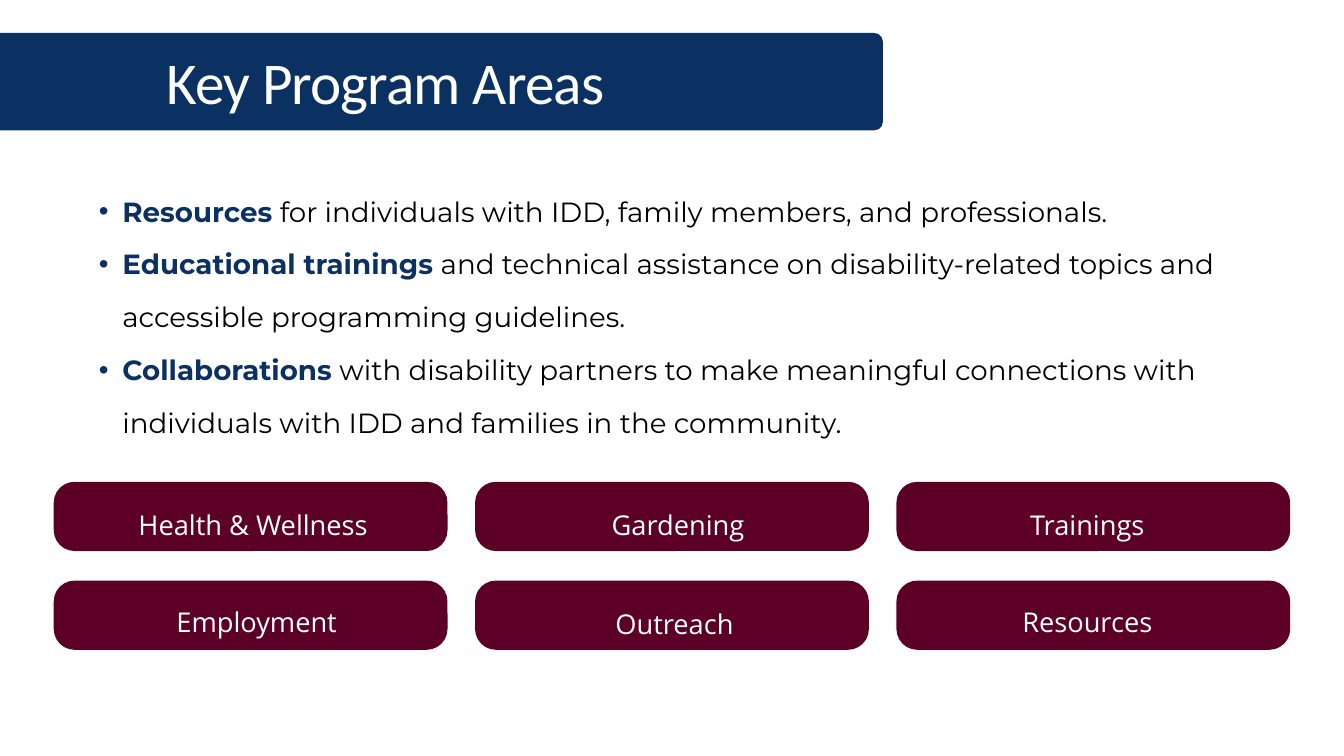
from dataclasses import dataclass

from lxml import etree
from pptx import Presentation
from pptx.dml.color import RGBColor
from pptx.enum.shapes import MSO_SHAPE
from pptx.enum.text import MSO_ANCHOR, MSO_AUTO_SIZE, PP_ALIGN
from pptx.oxml.ns import qn
from pptx.util import Inches, Pt

ROUNDED = MSO_SHAPE.ROUNDED_RECTANGLE
TOP = MSO_ANCHOR.TOP
FIXED_SIZE = MSO_AUTO_SIZE.NONE
LEFT, CENTER = PP_ALIGN.LEFT, PP_ALIGN.CENTER


@dataclass(frozen=True)
class Theme:
    navy: RGBColor = RGBColor(0x0A, 0x31, 0x61)
    maroon: RGBColor = RGBColor(0x5D, 0x00, 0x25)
    black: RGBColor = RGBColor(0, 0, 0)
    white: RGBColor = RGBColor(0xFF, 0xFF, 0xFF)
    label: RGBColor = RGBColor(0xFE, 0xFF, 0xFF)
    title_font: str = "Calibri"
    body_font: str = "Montserrat"
    label_font: str = "Open Sans"
    title_size: float = 63.4
    body_size: float = 29.7
    label_size: float = 29.2


@dataclass(frozen=True)
class Box:
    """A rectangle in inches."""
    left: float
    top: float
    width: float
    height: float

    def emu(self) -> tuple:
        return tuple(Inches(n) for n in (self.left, self.top, self.width, self.height))


@dataclass(frozen=True)
class Grid:
    left: float
    top: float
    width: float
    height: float
    gap_x: float
    gap_y: float

    def cell(self, column: int, row: int) -> Box:
        return Box(self.left + column * (self.width + self.gap_x),
                   self.top + row * (self.height + self.gap_y),
                   self.width, self.height)


@dataclass(frozen=True)
class Area:
    """A program area; insets place its label inside the button."""
    name: str
    column: int
    row: int
    inset_left: float = 0
    inset_right: float = 0
    inset_top: float = 0.22


@dataclass(frozen=True)
class Point:
    lead: str
    rest: str


THEME = Theme()
BAR = Box(-0.59, 0.49, 13.73, 1.45)
TITLE = Box(2.48, 0.71, 10.66, 1.05)
BODY = Box(1.12, 2.6, 18.07, 3.83)
BUTTONS = Grid(0.8, 7.17, 5.86, 1.03, 0.41, 0.44)

POINTS = [
    Point("Resources", " for individuals with IDD, family members, and professionals."),
    Point("Educational trainings", " and technical assistance on disability-related topics "
          "and accessible programming guidelines."),
    Point("Collaborations", " with disability partners to make meaningful connections "
          "with individuals with IDD and families in the community."),
]
AREAS = [
    Area("Health & Wellness ", 0, 0, inset_left=0.18),
    Area("Employment", 0, 1, inset_left=0.18, inset_top=0.19),
    Area("Gardening", 1, 0, inset_left=0.18),
    Area("Outreach ", 1, 1, inset_left=0.18),
    Area("Trainings", 2, 0, inset_right=0.18),
    Area("Resources", 2, 1, inset_right=0.18, inset_top=0.19),
]


def set_frame(frame, left: float = 0, top: float = 0, right: float = 0) -> None:
    frame.word_wrap = True
    frame.auto_size = FIXED_SIZE
    frame.vertical_anchor = TOP
    frame.margin_left, frame.margin_top = Inches(left), Inches(top)
    frame.margin_right, frame.margin_bottom = Inches(right), 0


def set_paragraph(paragraph, name: str, size: float, color: RGBColor,
                  line: float, align) -> None:
    paragraph.alignment = align
    paragraph.line_spacing = Pt(line)
    paragraph.space_before = Pt(0)
    paragraph.font.name = name
    paragraph.font.size = Pt(size)
    paragraph.font.color.rgb = color


def move(shape, box: Box) -> None:
    shape.left, shape.top, shape.width, shape.height = box.emu()


def add_rounded(page, box: Box, radius: float, color: RGBColor):
    shape = page.shapes.add_shape(ROUNDED, *box.emu())
    shape.adjustments[0] = radius / box.height
    shape.shadow.inherit = False
    shape.fill.solid()
    shape.fill.fore_color.rgb = color
    shape.line.fill.background()
    return shape


def add_bullet(paragraph, indent: float, hanging: float) -> None:
    properties = paragraph._p.get_or_add_pPr()
    properties.set("marL", str(Inches(indent)))
    properties.set("indent", str(-Inches(hanging)))
    font = etree.Element(qn("a:buFont"), typeface="Arial")
    mark = etree.Element(qn("a:buChar"), char="•")
    defaults = properties.find(qn("a:defRPr"))
    defaults.addprevious(font)
    defaults.addprevious(mark)


def fill_title(page) -> None:
    bar = add_rounded(page, BAR, 0.13, THEME.navy)
    page.shapes._spTree.insert(2, bar._element)  # behind the title
    title = page.shapes.title
    move(title, TITLE)
    set_frame(title.text_frame)
    paragraph = title.text_frame.paragraphs[0]
    set_paragraph(paragraph, THEME.title_font, THEME.title_size, THEME.white, 73.6, LEFT)
    span = paragraph.add_run()
    span.text = "Key Program Areas"
    span._r.get_or_add_rPr().set("spc", "-90")


def fill_points(page) -> None:
    body = page.placeholders[1]
    move(body, BODY)
    frame = body.text_frame
    set_frame(frame)
    for index, point in enumerate(POINTS):
        paragraph = frame.add_paragraph() if index else frame.paragraphs[0]
        set_paragraph(paragraph, THEME.body_font, THEME.body_size, THEME.black, 56.7, LEFT)
        add_bullet(paragraph, 0.7, 0.35)
        lead, rest = paragraph.add_run(), paragraph.add_run()
        lead.text, rest.text = point.lead, point.rest
        lead.font.bold = True
        lead.font.color.rgb = THEME.navy


def add_button(page, area: Area) -> None:
    button = add_rounded(page, BUTTONS.cell(area.column, area.row), 0.31, THEME.maroon)
    set_frame(button.text_frame, area.inset_left, area.inset_top, area.inset_right)
    paragraph = button.text_frame.paragraphs[0]
    paragraph.text = area.name
    set_paragraph(paragraph, THEME.label_font, THEME.label_size, THEME.label, 40.9, CENTER)


def main() -> None:
    deck = Presentation()
    deck.slide_width, deck.slide_height = Inches(20), Inches(11.25)
    page = deck.slides.add_slide(deck.slide_layouts[1])
    fill_title(page)
    fill_points(page)
    for area in AREAS:
        add_button(page, area)
    deck.save("out.pptx")


if __name__ == "__main__":
    main()
